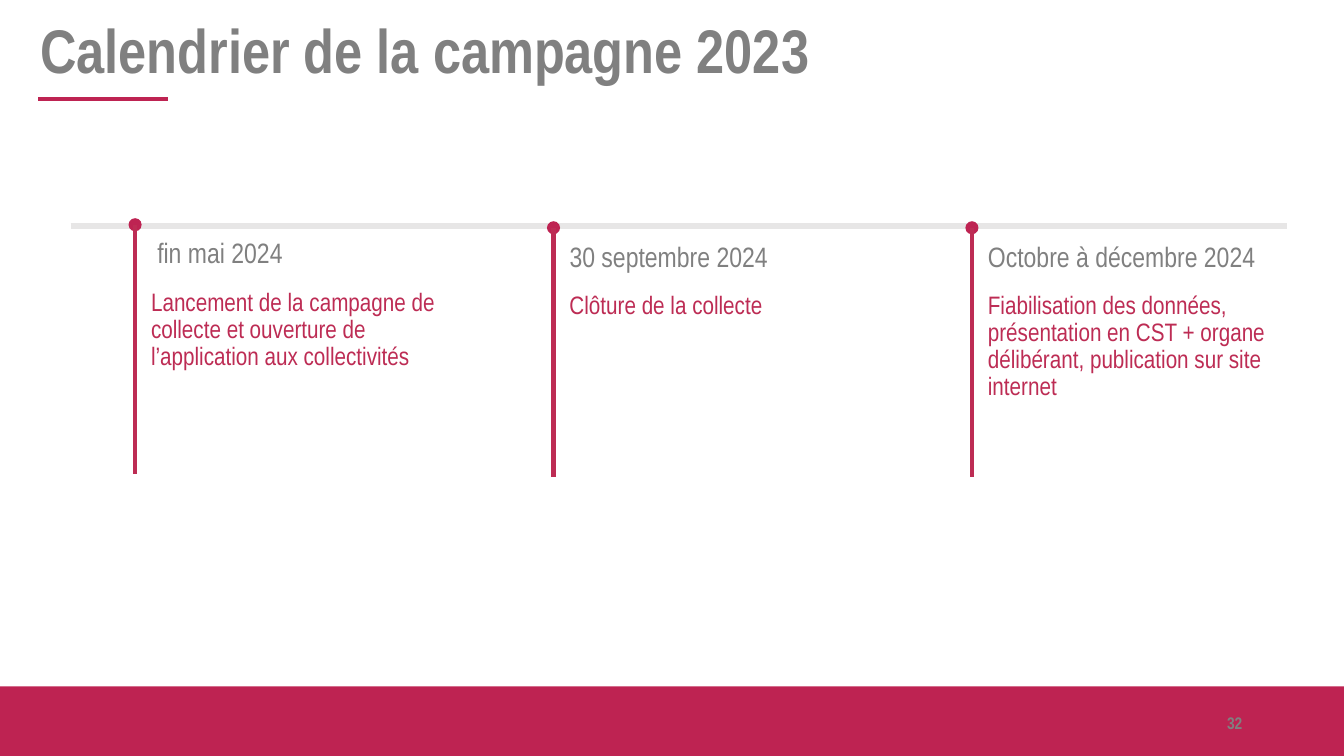
from dataclasses import dataclass

from lxml import etree
from pptx import Presentation
from pptx.dml.color import RGBColor
from pptx.enum.shapes import MSO_CONNECTOR, MSO_SHAPE
from pptx.enum.text import MSO_ANCHOR, PP_ALIGN
from pptx.oxml.ns import qn
from pptx.util import Inches, Pt

LINE = MSO_CONNECTOR.STRAIGHT
RECTANGLE, OVAL = MSO_SHAPE.RECTANGLE, MSO_SHAPE.OVAL
TOP, MIDDLE = MSO_ANCHOR.TOP, MSO_ANCHOR.MIDDLE
LEFT, RIGHT = PP_ALIGN.LEFT, PP_ALIGN.RIGHT

# Content
TITLE = "Calendrier de la campagne 2023"
PAGE_NUMBER = "32"
# Each milestone: date, description, vertical shift, date indent, date width
MILESTONES = [
    ("fin mai 2024",
     "Lancement de la campagne de collecte et ouverture de "
     "l’application aux collectivités", -0.03, 0.06, 2.41),
    ("30 septembre 2024", "Clôture de la collecte", 0, 0, 3.58),
    ("Octobre à décembre 2024",
     "Fiabilisation des données, présentation en CST + organe "
     "délibérant, publication sur site internet", 0, 0, 3.58),
]


@dataclass(frozen=True)
class Theme:
    font: str = "Arial Narrow"
    crimson: str = "BE2352"
    rose: str = "BD2C54"
    gray: str = "808080"
    rail: str = "E7E6E6"
    title_size: int = 44
    date_size: int = 20
    body_size: int = 18
    number_size: int = 12


THEME = Theme()

# Layout, in inches
WIDTH, HEIGHT = 13.33, 7.5
FOOTER_HEIGHT = 0.69
RAIL_TOP = 2.24
FIRST_STEM, STEM_STEP = 1.34, 4.15
STEM_TOP, STEM_LENGTH = 2.26, 2.47
DOT = 0.13
TEXT_GAP = 0.06
DATE_DROP, BODY_DROP = 0.1, 0.59

deck = Presentation()
deck.slide_width, deck.slide_height = Inches(WIDTH), Inches(HEIGHT)
page = deck.slides.add_slide(deck.slide_layouts[6])


def add_text(text, left, top, width, height, size, color=THEME.gray,
             bold=False, align=LEFT, anchor=TOP, spacing=0.9, indent=0):
    box = page.shapes.add_textbox(
        Inches(left), Inches(top), Inches(width), Inches(height))
    frame = box.text_frame
    frame.word_wrap = True
    frame.vertical_anchor = anchor
    frame.margin_left = Inches(0.1 + indent)
    para = frame.paragraphs[0]
    para.alignment, para.line_spacing = align, spacing
    span = para.add_run()
    span.text = text
    span.font.name, span.font.size, span.font.bold = THEME.font, Pt(size), bold
    span.font.color.rgb = RGBColor.from_string(color)


def add_shape(kind, left, top, width, height):
    shape = page.shapes.add_shape(
        kind, Inches(left), Inches(top), Inches(width), Inches(height))
    shape.shadow.inherit = False
    shape.fill.solid()
    shape.fill.fore_color.rgb = RGBColor.from_string(THEME.crimson)
    shape.line.fill.background()


def add_line(x1, y1, x2, y2, color, weight=3):
    line = page.shapes.add_connector(
        LINE, Inches(x1), Inches(y1), Inches(x2), Inches(y2))
    line.line.color.rgb = RGBColor.from_string(color)
    line.line.width = Pt(weight)
    etree.SubElement(line._element.spPr, qn("a:effectLst"))


# Footer band and title
add_shape(RECTANGLE, 0, HEIGHT - FOOTER_HEIGHT, WIDTH, FOOTER_HEIGHT)
add_text(TITLE, 0.3, 0.15, 12.64, 0.82, THEME.title_size, bold=True)

# Timeline
add_line(0.7, RAIL_TOP, 12.76, RAIL_TOP, THEME.rail, weight=4.5)
for index, (date, description, shift, indent, date_width) in enumerate(MILESTONES):
    stem = FIRST_STEM + index * STEM_STEP
    top = STEM_TOP + shift
    add_shape(OVAL, stem - DOT / 2, top - DOT / 2, DOT, DOT)
    add_line(stem, top + STEM_LENGTH, stem, top, THEME.rose)
    add_text(date, stem + TEXT_GAP, top + DATE_DROP, date_width, 0.53,
             THEME.date_size, indent=indent)
    add_text(description, stem + TEXT_GAP, top + BODY_DROP, 3.1, 1.68,
             THEME.body_size, color=THEME.rose)

# Title rule and page number
add_line(0.38, 0.98, 1.67, 0.98, THEME.crimson)
add_text(PAGE_NUMBER, 9.42, 6.97, 3, 0.4, THEME.number_size,
         bold=True, align=RIGHT, anchor=MIDDLE, spacing=1.0)

deck.save("out.pptx")
